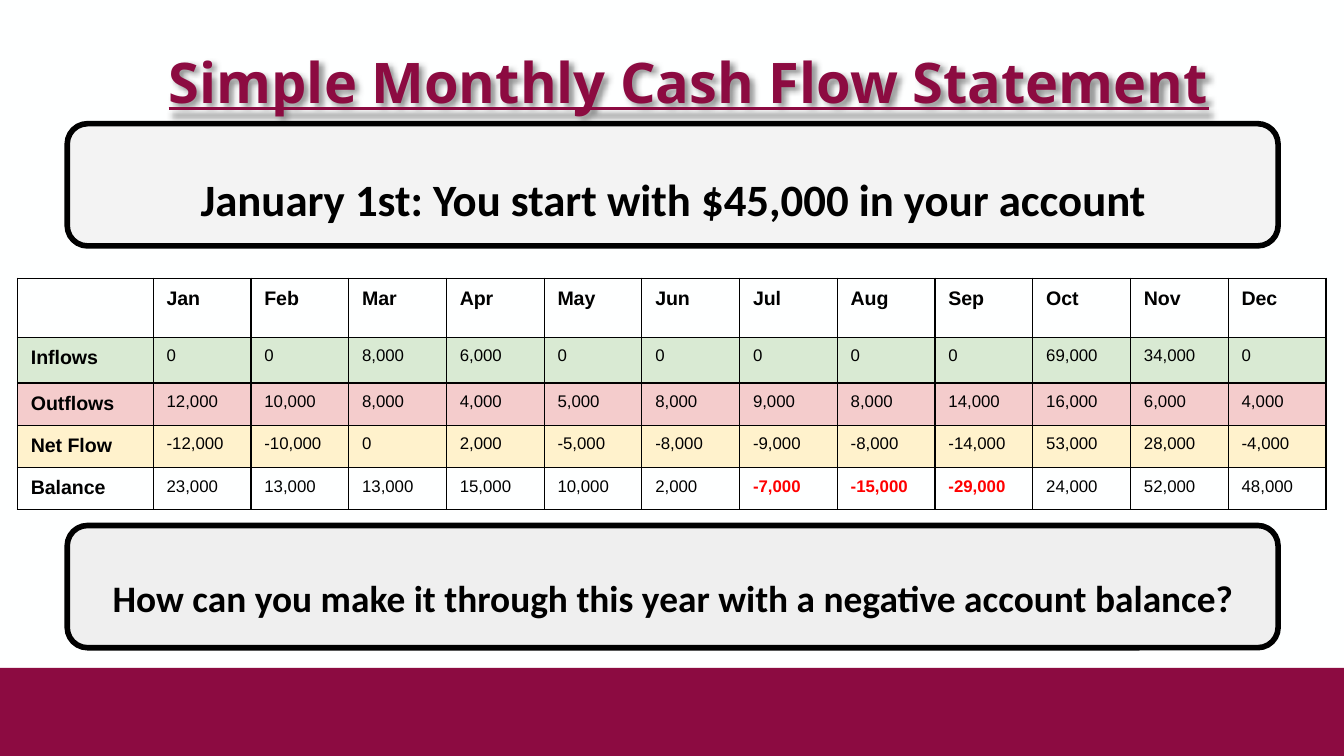
"""Build a slide with a monthly cash flow statement."""
from dataclasses import dataclass
from typing import Any

from lxml import etree
from pptx import Presentation
from pptx import util as u
from pptx.dml.color import RGBColor
from pptx.enum import shapes, text
from pptx.oxml import ns, parse_xml

WINE, BLACK, RED, WHITE = "8C0B41", "000000", "FF0000", "FEFFFF"
MONTHS = "Jan Feb Mar Apr May Jun Jul Aug Sep Oct Nov Dec"
BORDER = (
    '<a:{0} {1} w="9525"><a:solidFill><a:srgbClr val="{2}"/></a:solidFill></a:{0}>'
)
SHADOW = (
    '<a:effectLst {0}><a:outerShdw blurRad="38100" dist="28575" dir="2700000"'
    ' algn="tl"><a:srgbClr val="000000"><a:alpha val="43000"/></a:srgbClr>'
    "</a:outerShdw></a:effectLst>"
)


@dataclass
class Row:
    label: str
    cells: str
    high: float = 0.31
    fill: str = ""


@dataclass
class Panel:
    words: str
    top: float
    size: float
    fill: str


ROWS = [
    Row("", MONTHS),
    Row("Inflows", "0 0 8,000 6,000 0 0 0 0 0 69,000 34,000 0", 0.34, "D9EAD3"),
    Row("Outflows", "12,000 10,000 8,000 4,000 5,000 8,000 9,000 8,000 14,000 "
        "16,000 6,000 4,000", fill="F4CCCC"),
    Row("Net Flow", "-12,000 -10,000 0 2,000 -5,000 -8,000 -9,000 -8,000 -14,000 "
        "53,000 28,000 -4,000", fill="FFF2CC"),
    Row("Balance", "23,000 13,000 13,000 15,000 10,000 2,000 -7,000 -15,000 "
        "-29,000 24,000 52,000 48,000"),
]
PANELS = [
    Panel("January 1st: You start with $45,000 in your account", 0.92, 24, "F3F3F3"),
    Panel("How can you make it through this year with a negative account balance?",
          3.91, 20, "EFEFEF"),
]


def paint(part: Any, color: str) -> None:
    part.solid()
    part.fore_color.rgb = RGBColor.from_string(color)


def write(frame: Any, words: str, color: str, **form: Any) -> None:
    run = frame.paragraphs[0].add_run()
    run.text = words
    for key, value in form.items():
        setattr(run.font, key, value)
    paint(run.font.fill, color)


def center(frame: Any, indent: float) -> None:
    frame.word_wrap = True
    for side in ("left", "top", "right", "bottom"):
        setattr(frame, f"margin_{side}", u.Inches(0.1))
    para = frame.paragraphs[0]
    para.alignment = text.PP_ALIGN.CENTER
    para.line_spacing = 1.5
    props = para._p.get_or_add_pPr()
    props.set("marL", str(u.Inches(indent)))
    props.set("indent", "0")


def add_band(slide: Any) -> None:
    band = slide.shapes.add_shape(
        shapes.MSO_SHAPE.RECTANGLE, 0, u.Inches(4.97), u.Inches(10), u.Inches(0.66))
    band.shadow.inherit = False
    paint(band.fill, WINE)
    band.line.fill.background()


def add_title(slide: Any) -> None:
    box = slide.shapes.add_textbox(0, 0, u.Inches(10), u.Inches(0.91))
    box._element.spPr.append(parse_xml(SHADOW.format(ns.nsdecls("a"))))
    center(box.text_frame, 0.25)
    write(box.text_frame, "Simple Monthly Cash Flow Statement", WINE,
          name="Open Sans", size=u.Pt(30), bold=True, underline=True)


def add_panel(slide: Any, panel: Panel) -> None:
    box = slide.shapes.add_shape(
        shapes.MSO_SHAPE.ROUNDED_RECTANGLE, u.Inches(0.5), u.Inches(panel.top),
        u.Inches(9.01), u.Inches(0.91))
    box.shadow.inherit = False
    paint(box.fill, panel.fill)
    paint(box.line.fill, BLACK)
    box.line.width = u.Pt(3)
    box.text_frame.vertical_anchor = text.MSO_ANCHOR.MIDDLE
    center(box.text_frame, 0.01)
    write(box.text_frame, panel.words, BLACK,
          name="Calibri", size=u.Pt(panel.size), bold=True)


def fill_cell(cell: Any, words: str, row: Row, head: bool) -> None:
    props = cell._tc.get_or_add_tcPr()
    for tag in ("lnL", "lnR", "lnT", "lnB"):
        props.append(etree.fromstring(BORDER.format(tag, ns.nsdecls("a"), BLACK)))
    if row.fill:
        paint(cell.fill, row.fill)
    else:
        cell.fill.background()
    cell.margin_left = cell.margin_right = u.Inches(0.1)
    cell.margin_top = cell.margin_bottom = u.Inches(0.07)
    if words:
        debt = row.label == "Balance" and words.startswith("-")
        write(cell.text_frame, words, RED if debt else BLACK, name="Arial",
              size=u.Pt(10.5 if head else 9), bold=head or debt)


def add_grid(slide: Any) -> None:
    count = len(MONTHS.split()) + 1
    first, wide = u.Inches(1.01), u.Inches(9.74)
    grid = slide.shapes.add_table(
        len(ROWS), count, u.Inches(0.13), u.Inches(2.07), wide,
        u.Inches(sum(row.high for row in ROWS))).table
    grid.first_row = grid.horz_banding = False
    for index, column in enumerate(grid.columns):
        column.width = (wide - first) // (count - 1) if index else first
    for r, row in enumerate(ROWS):
        grid.rows[r].height = u.Inches(row.high)
        for c, words in enumerate([row.label, *row.cells.split()]):
            fill_cell(grid.cell(r, c), words, row, r == 0 or c == 0)


def main() -> None:
    deck = Presentation()
    deck.slide_width = u.Inches(10)
    deck.slide_height = deck.slide_width * 9 // 16
    slide = deck.slides.add_slide(deck.slide_layouts[6])
    paint(slide.background.fill, WHITE)
    add_band(slide)
    add_title(slide)
    add_grid(slide)
    for panel in PANELS:
        add_panel(slide, panel)
    deck.save("out.pptx")


if __name__ == "__main__":
    main()
